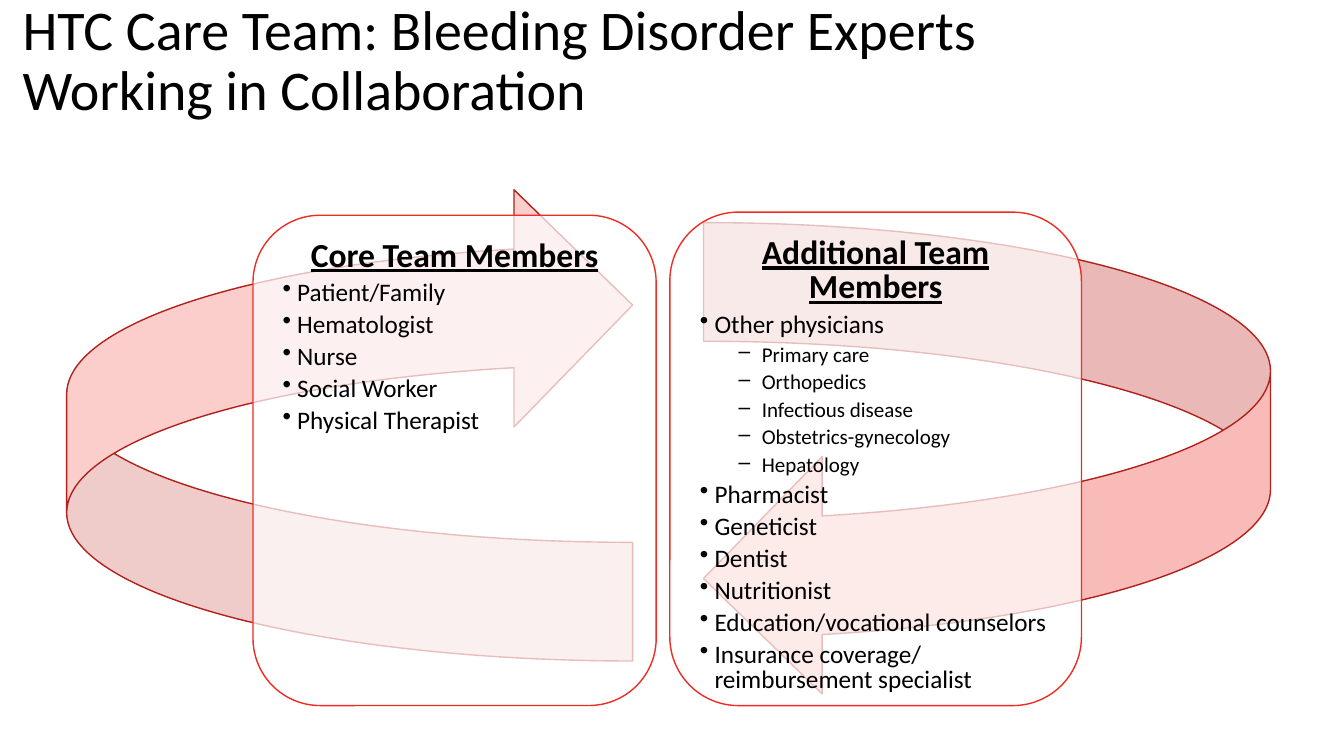
from lxml import etree
from pptx import Presentation
from pptx import util as u
from pptx.dml.color import RGBColor
from pptx.enum import shapes, text
from pptx.oxml.ns import qn

PX = 9525  # EMU per px, 96 px to the inch
FONT = "Calibri"
COLORS = {"red": "EE2C24", "dark_red": "B0211B", "white": "FFFFFF", "black": "000000"}

# Level -> bullet, left margin px, hanging px, size pt
LEVELS = {0: ("•", 14, 14, 18), 1: ("–", 59, 22, 15)}

CORE_MEMBERS = [(0, name) for name in (
    "Patient/Family", "Hematologist", "Nurse", "Social Worker", "Physical Therapist")]
PHYSICIANS = [(1, name) for name in (
    "Primary care", "Orthopedics", "Infectious disease", "Obstetrics-gynecology",
    "Hepatology")]
ADDITIONAL_MEMBERS = [(0, "Other physicians"), *PHYSICIANS] + [(0, name) for name in (
    "Pharmacist", "Geneticist", "Dentist", "Nutritionist",
    "Education/vocational counselors", "Insurance coverage/\vreimbursement specialist")]


def color(name):
    return RGBColor.from_string(COLORS[name])


def add_tinted_shape(slide, preset, box, fill, opacity, line):
    shape = slide.shapes.add_shape(preset, *(v * PX for v in box))
    shape.shadow.inherit = False
    shape.fill.solid()
    shape.fill.fore_color.rgb = color(fill)
    tint = shape.fill._xPr.find(qn("a:solidFill"))[0]
    etree.SubElement(tint, qn("a:alpha")).set("val", str(opacity * 1000))
    shape.line.color.rgb = color(line)
    shape.line.width = u.Pt(1)
    return shape


def format_runs(paragraph, size, bold=False, underline=False):
    for run in paragraph.runs:
        run.font.name = FONT
        run.font.size = u.Pt(size)
        run.font.bold = bold
        run.font.underline = underline
        run.font.color.rgb = color("black")


def add_title(slide, box, title):
    frame = slide.shapes.add_textbox(*(v * PX for v in box)).text_frame
    frame.word_wrap = True
    frame.vertical_anchor = text.MSO_ANCHOR.MIDDLE
    heading = frame.paragraphs[0]
    heading.text = title
    heading.line_spacing = 0.9
    format_runs(heading, 40)


def add_loop_arrow(slide, box, rotation, opacity):
    arrow = add_tinted_shape(slide, shapes.MSO_SHAPE.CURVED_DOWN_ARROW, box,
                             "red", opacity, "dark_red")
    arrow.rotation = rotation


def add_member(frame, level, name):
    bullet, margin, hanging, size = LEVELS[level]
    member = frame.add_paragraph()
    member.text = name
    member.level = level
    member.alignment = text.PP_ALIGN.LEFT
    props = member._p.get_or_add_pPr()
    props.set("marL", str(margin * PX))
    props.set("indent", str(-hanging * PX))
    etree.SubElement(props, qn("a:buChar")).set("char", bullet)
    member.line_spacing = 0.85
    member.space_before = member.space_after = u.Pt(2.2)
    format_runs(member, size)


def add_team_card(slide, box, heading, members):
    card = add_tinted_shape(slide, shapes.MSO_SHAPE.ROUNDED_RECTANGLE, box,
                            "white", 71, "red")
    frame = card.text_frame
    frame.word_wrap = True
    frame.vertical_anchor = text.MSO_ANCHOR.TOP
    team = frame.paragraphs[0]
    team.text = heading
    team.alignment = text.PP_ALIGN.CENTER
    team.line_spacing = 0.85
    team.space_after = u.Pt(3)
    format_runs(team, 24, bold=True, underline=True)
    for level, name in members:
        add_member(frame, level, name)


def main():
    deck = Presentation()
    deck.slide_width, deck.slide_height = 1280 * PX, 720 * PX
    slide = deck.slides.add_slide(deck.slide_layouts[6])

    # Arrows looping between the two teams
    add_loop_arrow(slide, (714, 168, 452, 540), 90, 32)
    add_loop_arrow(slide, (107, 134, 452, 539), 270, 23)

    add_title(slide, (12, 11, 1136, 97),
              "HTC Care Team: Bleeding Disorder Experts\vWorking in Collaboration")

    # Team cards
    add_team_card(slide, (241, 205, 384, 467), "Core Team Members", CORE_MEMBERS)
    add_team_card(slide, (638, 202, 392, 470), "Additional Team Members",
                  ADDITIONAL_MEMBERS)

    deck.save("out.pptx")


if __name__ == "__main__":
    main()
